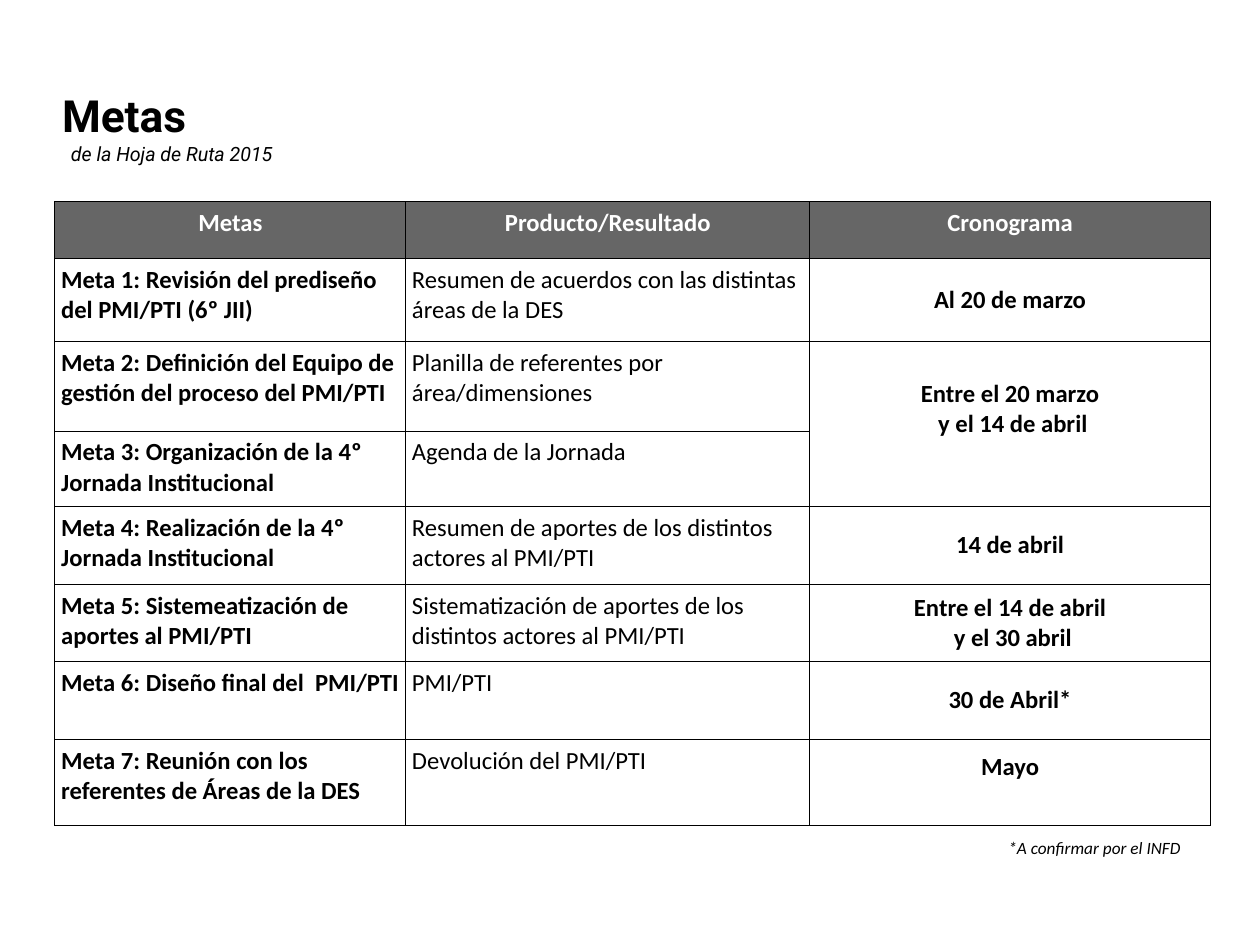
from lxml import etree
from pptx import Presentation
from pptx.dml.color import RGBColor
from pptx.enum.text import MSO_ANCHOR, MSO_AUTO_SIZE, PP_ALIGN
from pptx.oxml.ns import qn
from pptx.util import Inches, Pt

TITLE = "Metas"
SUBTITLE = "de la Hoja de Ruta 2015"
FOOTNOTE = "*A confirmar por el INFD"
HEADERS = ("Metas", "Producto/Resultado", "Cronograma")
# An empty schedule continues the one above it.
GOALS = [
    ("Meta 1: Revisión del prediseño del PMI/PTI (6º JII)",
     "Resumen de acuerdos con las distintas áreas de la DES",
     "Al 20 de marzo"),
    ("Meta 2: Definición del Equipo de gestión del proceso del PMI/PTI",
     "Planilla de referentes por área/dimensiones",
     "Entre el 20 marzo\n y el 14 de abril"),
    ("Meta 3: Organización de la 4º Jornada Institucional",
     "Agenda de la Jornada",
     ""),
    ("Meta 4: Realización de la 4º Jornada Institucional",
     "Resumen de aportes de los distintos actores al PMI/PTI",
     "14 de abril"),
    ("Meta 5: Sistemeatización de aportes al PMI/PTI",
     "Sistematización de aportes de los distintos actores al PMI/PTI",
     "Entre el 14 de abril\n y el 30 abril"),
    ("Meta 6: Diseño final del  PMI/PTI",
     "PMI/PTI",
     "30 de Abril*"),
    ("Meta 7: Reunión con los referentes de Áreas de la DES",
     "Devolución del PMI/PTI",
     "Mayo"),
]
RAISED_ROWS = (2, 7)  # schedules that sit above the middle of their cell
COLUMN_WIDTHS = (3.96, 4.56, 4.52)
ROW_HEIGHTS = (0.64, 0.94, 1.01, 0.85, 0.88, 0.87, 0.88, 0.97)
SCHEDULE_COLUMN = 2
CELL_MARGIN = 0.07
RAISED_MARGIN = 0.41

BLACK = RGBColor(0x00, 0x00, 0x00)
WHITE = RGBColor(0xFF, 0xFF, 0xFF)
GRAY = RGBColor(0x66, 0x66, 0x66)
LEFT, CENTER = PP_ALIGN.LEFT, PP_ALIGN.CENTER
TOP, MIDDLE = MSO_ANCHOR.TOP, MSO_ANCHOR.MIDDLE


def format_paragraph(paragraph, font_name, size, color, bold=False, italic=False, align=LEFT):
    paragraph.alignment = align
    for run in paragraph.runs:
        font = run.font
        font.name, font.size = font_name, Pt(size)
        font.bold, font.italic = bold, italic
        font.color.rgb = color


def set_margins(frame, left, top, right, bottom):
    frame.margin_left, frame.margin_top = Inches(left), Inches(top)
    frame.margin_right, frame.margin_bottom = Inches(right), Inches(bottom)


def add_borders(cell):
    properties = cell._tc.get_or_add_tcPr()
    for position, side in enumerate(("lnL", "lnR", "lnT", "lnB")):
        line = etree.Element(qn("a:" + side), w=str(Pt(1)))
        fill = etree.SubElement(line, qn("a:solidFill"))
        etree.SubElement(fill, qn("a:srgbClr"), val=str(BLACK))
        properties.insert(position, line)


def add_title(slide):
    title = slide.shapes.title
    title.left, title.top = Inches(0.64), Inches(0.53)
    title.width, title.height = Inches(3.42), Inches(1.8)
    frame = title.text_frame
    frame.text = f"{TITLE}\n{SUBTITLE}"
    frame.auto_size = MSO_AUTO_SIZE.NONE
    frame.vertical_anchor = MIDDLE
    set_margins(frame, 0.06, 0.06, 0.06, 0.06)
    heading, subtitle = frame.paragraphs
    format_paragraph(heading, "Roboto", 36, BLACK, bold=True)
    format_paragraph(subtitle, "Roboto", 16, BLACK, italic=True)
    subtitle._p.get_or_add_pPr().set("marL", str(Inches(0.1)))


def fill_cell(cell, text, row, column):
    is_header = row == 0
    is_schedule = column == SCHEDULE_COLUMN and not is_header
    raised = is_schedule and row in RAISED_ROWS
    cell.text = text
    cell.vertical_anchor = MIDDLE if is_schedule else TOP
    set_margins(cell, CELL_MARGIN, CELL_MARGIN, CELL_MARGIN,
                RAISED_MARGIN if raised else CELL_MARGIN)
    if is_header:
        cell.fill.solid()
        cell.fill.fore_color.rgb = GRAY
    else:
        cell.fill.background()
    for paragraph in cell.text_frame.paragraphs:
        format_paragraph(paragraph, "Calibri", 20, WHITE if is_header else BLACK,
                         bold=is_header or column != 1,
                         align=CENTER if is_header or is_schedule else LEFT)
    add_borders(cell)


def add_goal_table(slide):
    rows = [HEADERS] + GOALS
    table = slide.shapes.add_table(
        len(rows), len(HEADERS), Inches(0.62), Inches(2.28),
        Inches(sum(COLUMN_WIDTHS)), Inches(sum(ROW_HEIGHTS))).table
    table.first_row = table.horz_banding = False
    for column, width in zip(table.columns, COLUMN_WIDTHS):
        column.width = Inches(width)
    for row, height in zip(table.rows, ROW_HEIGHTS):
        row.height = Inches(height)
    for r, texts in enumerate(rows):
        for c, text in enumerate(texts):
            fill_cell(table.cell(r, c), text, r, c)
            if not text:
                table.cell(r - 1, c).merge(table.cell(r, c))


def add_footnote(slide):
    box = slide.shapes.add_textbox(Inches(11.21), Inches(9.32), Inches(2.46), Inches(0.5))
    frame = box.text_frame
    frame.word_wrap = True
    frame.vertical_anchor = MIDDLE
    set_margins(frame, 0.17, 0.1, 0.1, 0.1)
    frame.text = FOOTNOTE
    format_paragraph(frame.paragraphs[0], "Calibri", 14, BLACK, italic=True)


def main():
    presentation = Presentation()
    presentation.slide_width = Inches(14.22)
    presentation.slide_height = Inches(10.67)
    slide = presentation.slides.add_slide(presentation.slide_layouts[5])
    add_title(slide)
    add_goal_table(slide)
    add_footnote(slide)
    presentation.save("out.pptx")


if __name__ == "__main__":
    main()
